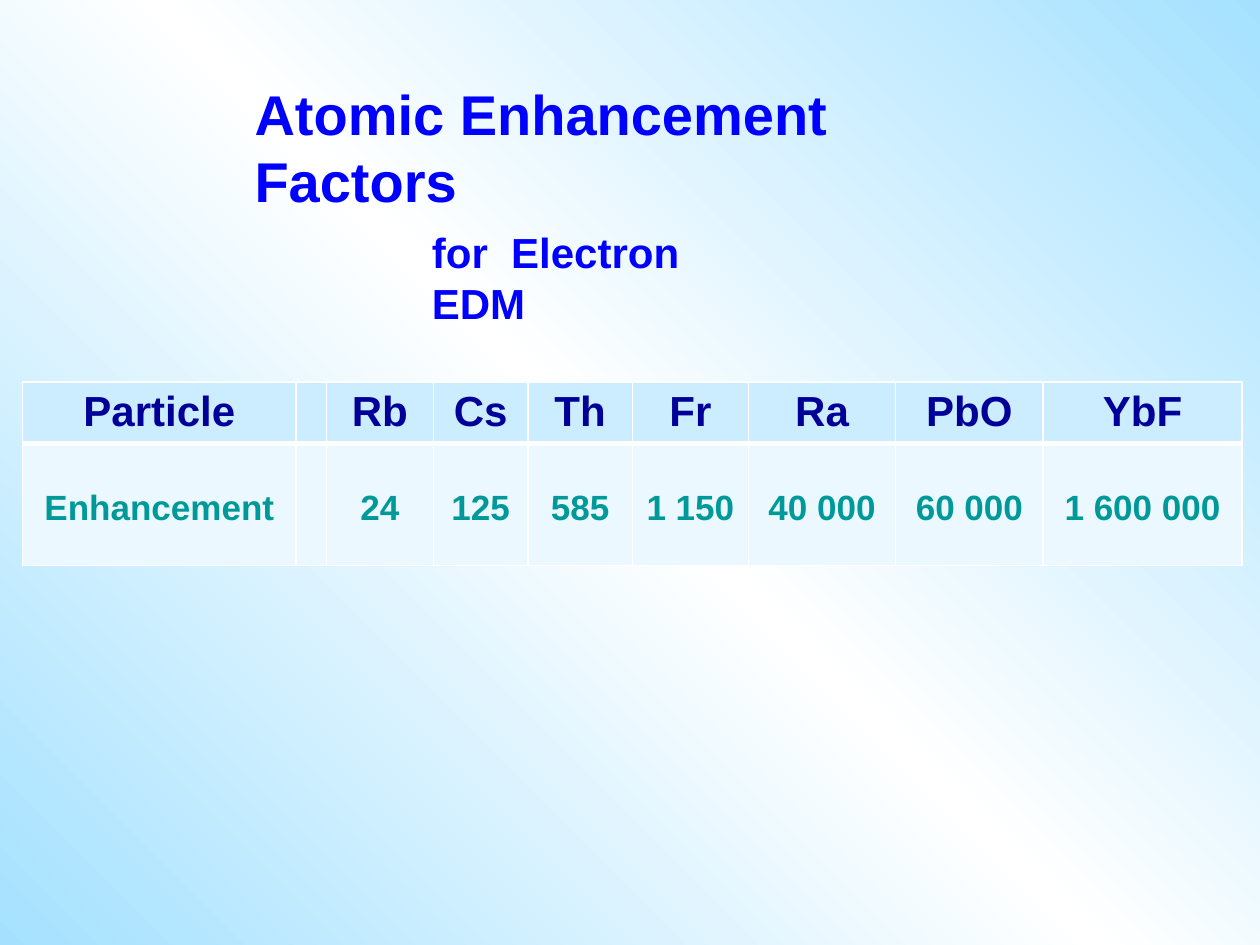
from copy import deepcopy

from lxml.etree import SubElement
from pptx import Presentation
from pptx.dml.color import RGBColor
from pptx.enum.text import MSO_ANCHOR, PP_ALIGN
from pptx.oxml.ns import qn
from pptx.util import Inches, Pt


def style(paragraph, size, color, align):
    paragraph.alignment = align
    paragraph.font.name = "Arial"
    paragraph.font.size = Pt(size)
    paragraph.font.bold = True
    paragraph.font.color.rgb = RGBColor.from_string(color)


def add_borders(cell, widths):
    properties = cell._tc.get_or_add_tcPr()
    for side, width in widths.items():
        line = SubElement(properties, qn(f"a:ln{side}"), w=str(Pt(width)))
        solid = SubElement(line, qn("a:solidFill"))
        SubElement(solid, qn("a:srgbClr"), val="FFFFFF")


prs = Presentation()
prs.slide_width = Inches(10)
prs.slide_height = Inches(7.5)
slide = prs.slides.add_slide(prs.slide_layouts[5])

background = slide.background.fill
background.gradient()
background.gradient_angle = 45
stops = slide._element.find(".//" + qn("a:gsLst"))
stops.append(deepcopy(stops[0]))
gradient = [(0, "A5E1FF"), (0.5, "FFFFFF"), (1, "A5E1FF")]
for stop, (position, color) in zip(background.gradient_stops, gradient):
    stop.position = position
    stop.color.rgb = RGBColor.from_string(color)

columns = [
    ("Particle", "Enhancement", 2.17),
    ("", "", 0.24),
    ("Rb", "24", 0.85),
    ("Cs", "125", 0.75),
    ("Th", "585", 0.83),
    ("Fr", "1 150", 0.92),
    ("Ra", "40 000", 1.17),
    ("PbO", "60 000", 1.17),
    ("YbF", "1 600 000", 1.58),
]
rows = [
    (0.49, 24, "000099", "CCECFF", 0.05, {"L": 1, "R": 1, "T": 1, "B": 3}),
    (0.97, 20, "009999", "ECF8FF", 0.36, {"L": 1, "R": 1, "T": 3, "B": 1}),
]
factors = slide.shapes.add_table(
    len(rows), len(columns), Inches(0.18), Inches(3.03), Inches(9.68), Inches(1.46)
).table
for c, column in enumerate(columns):
    factors.columns[c].width = Inches(column[2])
    for r, (height, size, color, fill, top, borders) in enumerate(rows):
        factors.rows[r].height = Inches(height)
        cell = factors.cell(r, c)
        cell.text = column[r]
        cell.margin_top = Inches(top)
        style(cell.text_frame.paragraphs[0], size, color, PP_ALIGN.CENTER)
        add_borders(cell, borders)
        cell.fill.solid()
        cell.fill.fore_color.rgb = RGBColor.from_string(fill)

title = slide.shapes.title
title.left, title.top = Inches(1.92), Inches(0.58)
title.width, title.height = Inches(5.61), Inches(1.17)
subtitle = slide.shapes.add_textbox(Inches(3.33), Inches(1.75), Inches(2.73), Inches(0.9))
for heading, text, size in [
    (title, "Atomic Enhancement Factors", 32),
    (subtitle, "for  Electron EDM", 24),
]:
    frame = heading.text_frame
    frame.text = text
    frame.word_wrap = True
    frame.vertical_anchor = MSO_ANCHOR.TOP
    style(frame.paragraphs[0], size, "0000FF", PP_ALIGN.LEFT)

prs.save("out.pptx")
